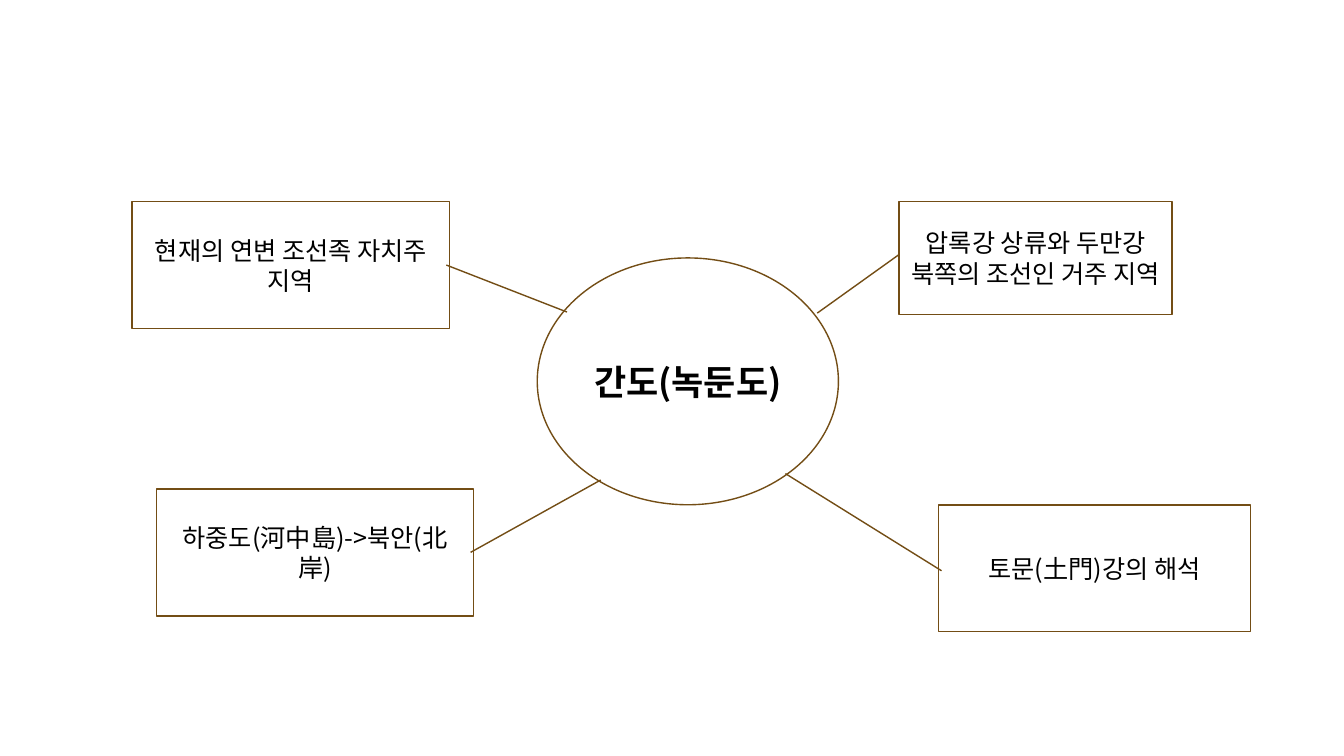
from dataclasses import dataclass

from lxml.etree import SubElement
from pptx import Presentation
from pptx.dml.color import RGBColor
from pptx.enum.shapes import MSO_SHAPE
from pptx.enum.text import MSO_ANCHOR, PP_ALIGN
from pptx.oxml.ns import qn
from pptx.util import Cm, Pt


@dataclass(frozen=True)
class Theme:
    font: str = "Noto Sans CJK KR"
    text: RGBColor = RGBColor(0x00, 0x00, 0x00)
    outline: RGBColor = RGBColor(0x73, 0x4D, 0x15)
    line_width: float = 1
    topic_size: int = 25
    note_size: int = 18


class MindMap:
    def __init__(self, slide, theme):
        self.slide = slide
        self.theme = theme

    def shape(self, kind, box, text, size, bold=False):
        sp = self.slide.shapes.add_shape(kind, *(Cm(v) for v in box))
        sp.shadow.inherit = False
        sp.fill.background()
        sp.line.color.rgb = self.theme.outline
        sp.line.width = Pt(self.theme.line_width)
        tf = sp.text_frame
        tf.word_wrap = True
        tf.vertical_anchor = MSO_ANCHOR.MIDDLE
        p = tf.paragraphs[0]
        p.text = text
        p.alignment = PP_ALIGN.CENTER
        r = p.runs[0]
        r.font.name = self.theme.font
        r.font.size = Pt(size)
        r.font.bold = bold
        r.font.color.rgb = self.theme.text
        SubElement(r.font._element, qn("a:ea"), typeface=self.theme.font)
        return sp

    def topic(self, box, text):
        self.shape(MSO_SHAPE.OVAL, box, text, self.theme.topic_size, bold=True)

    def callout(self, box, text, pointer):
        sp = self.shape(MSO_SHAPE.LINE_CALLOUT_1, box, text, self.theme.note_size)
        for i, value in enumerate(pointer):
            sp.adjustments[i] = value


CALLOUTS = [
    ((22.66, 5.08, 6.88, 2.84), "압록강 상류와 두만강 북쪽의 조선인 거주 지역", (0.47, 0, 0.99, -0.3)),
    ((3.33, 5.08, 8, 3.2), "현재의 연변 조선족 자치주 지역", (0.5, 0.99, 0.87, 1.37)),
    ((3.94, 12.32, 8, 3.2), "하중도(河中島)->북안(北岸)", (0.5, 0.99, -0.07, 1.4)),
    ((23.65, 12.73, 7.87, 3.18), "토문(土門)강의 해석", (0.52, 0.01, -0.25, -0.49)),
]


def main():
    prs = Presentation()
    prs.slide_width = Cm(33.87)
    prs.slide_height = Cm(19.05)
    s = prs.slides.add_slide(prs.slide_layouts[6])
    mind_map = MindMap(s, Theme())
    mind_map.topic((13.54, 6.5, 7.59, 6.22), "간도(녹둔도)")
    for box, text, pointer in CALLOUTS:
        mind_map.callout(box, text, pointer)
    prs.save("out.pptx")


if __name__ == "__main__":
    main()
